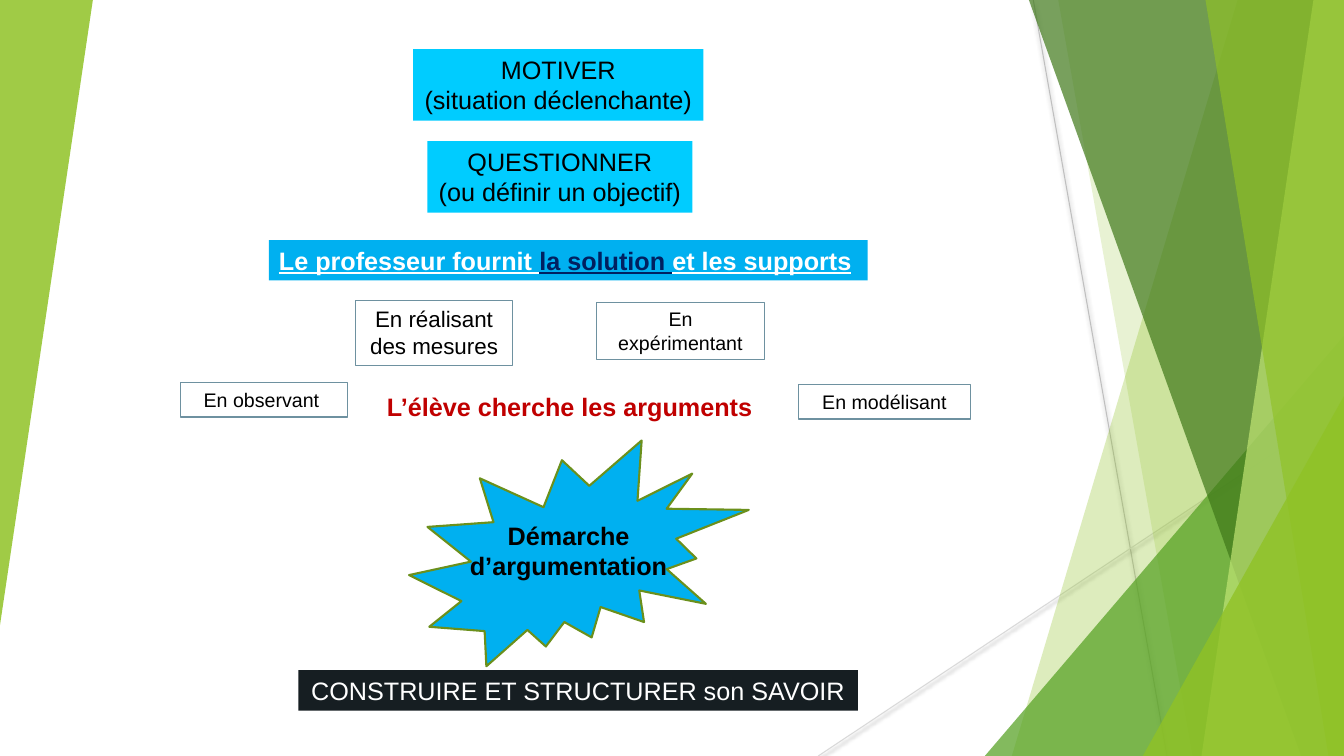
import lxml.etree
import pptx
import pptx.dml.color
import pptx.enum.shapes
import pptx.enum.text
import pptx.oxml.ns
import pptx.util

Cm = pptx.util.Cm
Pt = pptx.util.Pt
RGBColor = pptx.dml.color.RGBColor
Preset = pptx.enum.shapes.MSO_SHAPE
Align = pptx.enum.text.PP_ALIGN
qn = pptx.oxml.ns.qn

LIME = RGBColor(0x90, 0xC2, 0x26)
GREEN = RGBColor(0x54, 0xA0, 0x21)
FOREST = RGBColor(0x3F, 0x78, 0x19)
PALE_LIME = RGBColor(0xC0, 0xE4, 0x74)
OLIVE = RGBColor(0x6B, 0x90, 0x1C)
CYAN = RGBColor(0x00, 0xCC, 0xFF)
AZURE = RGBColor(0x00, 0xB0, 0xF0)
NAVY = RGBColor(0x00, 0x20, 0x60)
INK = RGBColor(0x16, 0x1E, 0x22)
SLATE = RGBColor(0x6E, 0x91, 0xA0)
RED = RGBColor(0xC0, 0x00, 0x00)
BLACK = RGBColor(0x00, 0x00, 0x00)
WHITE = RGBColor(0xFF, 0xFF, 0xFF)
GREY = RGBColor(0xBF, 0xBF, 0xBF)
LIGHT_GREY = RGBColor(0xD9, 0xD9, 0xD9)

WIDTH, HEIGHT = 33.87, 19.05

deck = pptx.Presentation()
deck.slide_width, deck.slide_height = Cm(WIDTH), Cm(HEIGHT)
page = deck.slides.add_slide(deck.slide_layouts[6])


def paint(shape, colour, opacity):
    """Give a borderless shape a see-through fill."""
    shape.shadow.inherit = False
    shape.line.fill.background()
    shape.fill.solid()
    shape.fill.fore_color.rgb = colour
    tint = shape.element.spPr.find(qn("a:solidFill"))[0]
    lxml.etree.SubElement(tint, qn("a:alpha"), val=str(opacity * 1000))


def add_label(text, place, size=18, colour=BLACK, fill=None, edge=None,
              bold=False, align=Align.CENTER, wrap=False):
    """Add a text box and return its text frame."""
    box = page.shapes.add_textbox(*map(Cm, place))
    if fill is not None:
        box.fill.solid()
        box.fill.fore_color.rgb = fill
    if edge is not None:
        box.line.color.rgb = edge
        box.line.width = Pt(0.75)
    frame = box.text_frame
    frame.text = text
    frame.word_wrap = wrap
    frame.auto_size = pptx.enum.text.MSO_AUTO_SIZE.SHAPE_TO_FIT_TEXT
    for para in frame.paragraphs:
        para.alignment = align
        para.font.size = Pt(size)
        for span in para.runs:
            span.font.name = "Arial"
            span.font.size = Pt(size)
            span.font.bold = bold
            span.font.color.rgb = colour
    return frame


# Thin shadowed lines behind the facets
for ends, colour in [
    ((26.04, 0, 29.41, HEIGHT), GREY),
    ((WIDTH, 10.24, 20.62, HEIGHT), LIGHT_GREY),
]:
    line = page.shapes.add_connector(
        pptx.enum.shapes.MSO_CONNECTOR.STRAIGHT, *map(Cm, ends))
    line.line.color.rgb = colour
    line.line.width = Pt(0.75)
    effects = lxml.etree.SubElement(line.element.spPr, qn("a:effectLst"))
    shadow = lxml.etree.SubElement(
        effects, qn("a:outerShdw"), blurRad=str(Pt(3.1)), dist=str(Pt(1.6)),
        dir="5400000", rotWithShape="0")
    shade = lxml.etree.SubElement(shadow, qn("a:srgbClr"), val=str(BLACK))
    lxml.etree.SubElement(shade, qn("a:alpha"), val="38000")

# Green facets: a slanted left edge (top x, bottom x) reaching the right side,
# or a right triangle (left, top) reaching the bottom right corner
for kind, first, second, colour, opacity in [
    ("facet", 31.19, 25.5, LIME, 30),
    ("facet", 26.67, 30.05, LIME, 20),
    ("triangle", 24.82, 8.46, GREEN, 72),
    ("facet", 25.93, 32.79, FOREST, 70),
    ("facet", 33.1, 30.28, PALE_LIME, 70),
    ("facet", 30.38, 33.48, LIME, 65),
    ("triangle", 28.8, 9.98, LIME, 80),
]:
    if kind == "facet":
        outline = page.shapes.build_freeform(Cm(first), 0)
        outline.add_line_segments([
            (Cm(WIDTH), 0), (Cm(WIDTH), Cm(HEIGHT)), (Cm(second), Cm(HEIGHT))])
        facet = outline.convert_to_shape()
    else:
        facet = page.shapes.add_shape(
            Preset.ISOSCELES_TRIANGLE, Cm(first), Cm(second),
            Cm(WIDTH - first), Cm(HEIGHT - second))
        facet.adjustments[0] = 1
    paint(facet, colour, opacity)

# Left wedge
wedge = page.shapes.add_shape(
    Preset.ISOSCELES_TRIANGLE, 0, 0, Cm(2.34), Cm(15.75))
wedge.adjustments[0] = 1
wedge.rotation = 180
paint(wedge, LIME, 85)

# Starburst
burst = page.shapes.add_shape(
    Preset.EXPLOSION2, Cm(10.31), Cm(11.1), Cm(8.56), Cm(5.69))
burst.shadow.inherit = False
burst.fill.solid()
burst.fill.fore_color.rgb = AZURE
burst.line.color.rgb = OLIVE
burst.line.width = Pt(1.5)

# Steps of the approach
add_label("MOTIVER\n(situation déclenchante)", (10.41, 1.24, 7.32, 1.8), fill=CYAN)
add_label("QUESTIONNER\n(ou définir un objectif)", (10.77, 3.56, 6.68, 1.8), fill=CYAN)
add_label("CONSTRUIRE ET STRUCTURER son SAVOIR", (7.52, 16.89, 14.1, 1.02),
          colour=WHITE, fill=INK)
add_label("L’élève cherche les arguments", (9.5, 9.73, 9.8, 1.02),
          colour=RED, bold=True, align=Align.LEFT)
add_label("Démarche d’argumentation", (10.95, 12.98, 6.76, 1.8),
          bold=True, wrap=True)

# Teacher's role, with its key words in navy
teacher = add_label("Le professeur fournit ", (6.78, 6.05, 15.09, 1.02),
                    colour=WHITE, fill=AZURE, bold=True, align=Align.LEFT)
sentence = teacher.paragraphs[0]
for text, colour in [("la solution ", NAVY), ("et les supports", WHITE)]:
    span = sentence.add_run()
    span.text = text
    span.font.name = "Arial"
    span.font.size = Pt(18)
    span.font.bold = True
    span.font.color.rgb = colour
for span in sentence.runs:
    span.font.underline = True

# Ways of searching
for text, place, size in [
    ("En observant ", (4.55, 9.65, 4.22, 0.86), 14),
    ("En expérimentant", (15.04, 7.62, 4.22, 1.45), 14),
    ("En modélisant", (20.12, 9.7, 4.34, 0.86), 14),
    ("En réalisant des mesures", (8.97, 7.57, 3.94, 1.65), 16),
]:
    add_label(text, place, size, edge=SLATE, wrap=True)

deck.save("out.pptx")
